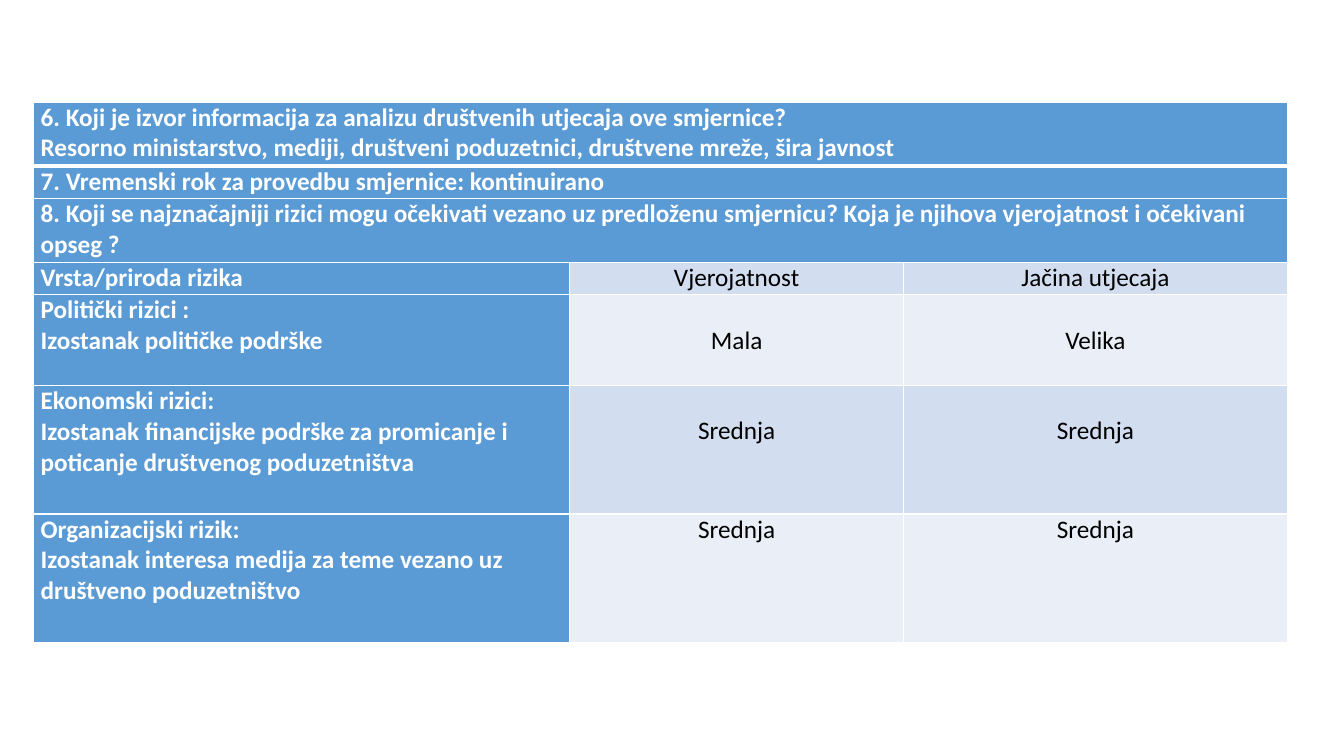
from lxml import etree
from pptx import Presentation
from pptx import util as u
from pptx.dml.color import RGBColor
from pptx.enum import text
from pptx.oxml import ns

WIDE, HIGH = u.Inches(13.33), u.Inches(7.5)
WHITE = RGBColor(0xFF, 0xFF, 0xFF)
BLACK = RGBColor(0, 0, 0)
BLUE = RGBColor(0x5B, 0x9B, 0xD5)
BANDS = RGBColor(0xD2, 0xDE, 0xEF), RGBColor(0xEA, 0xEF, 0xF7)

# Shares of the slide in percent
COLS = 39.9, 24.83, 28.57
ROWS = 8.5, 4.25, 8.5, 4.25, 12, 17, 17
LINE = u.Inches(0.3)
SIDE = u.Inches(0.07)

HEADS = [
    "6. Koji je izvor informacija za analizu društvenih utjecaja ove smjernice?\n"
    "Resorno ministarstvo, mediji, društveni poduzetnici, društvene mreže, šira javnost",
    "7. Vremenski rok za provedbu smjernice: kontinuirano",
    "8. Koji se najznačajniji rizici mogu očekivati vezano uz predloženu smjernicu? "
    "Koja je njihova vjerojatnost i očekivani opseg ?",
]
# Label, likelihood, impact, lines left free above the ratings
RISKS = [
    ("Vrsta/priroda rizika", "Vjerojatnost", "Jačina utjecaja", 0),
    ("Politički rizici :\nIzostanak političke podrške", "Mala", "Velika", 1),
    ("Ekonomski rizici:\nIzostanak financijske podrške za promicanje i "
     "poticanje društvenog poduzetništva", "Srednja", "Srednja", 1),
    ("Organizacijski rizik:\nIzostanak interesa medija za teme vezano uz "
     "društveno poduzetništvo", "Srednja", "Srednja", 0),
]


def share(size, part):
    return u.Emu(int(size * part / 100))


def edge(cell, side, width):
    props = cell._tc.get_or_add_tcPr()
    line = etree.SubElement(props, ns.qn("a:ln" + side), w=str(u.Pt(width)))
    fill = etree.SubElement(line, ns.qn("a:solidFill"))
    etree.SubElement(fill, ns.qn("a:srgbClr"), val=str(WHITE))


def frame(table):
    """Rule all cells in white, with a thick line under the first row."""
    for row, line in enumerate(table.rows):
        for cell in line.cells:
            for side in "LRTB":
                thick = (row, side) in ((0, "B"), (1, "T"))
                edge(cell, side, 3 if thick else 1)


def paint(cell, words, fill, ink, bold=False, align=text.PP_ALIGN.LEFT, top=0):
    cell.fill.solid()
    cell.fill.fore_color.rgb = fill
    cell.margin_left = cell.margin_right = SIDE
    cell.margin_top, cell.margin_bottom = top, 0
    cell.text_frame.text = words
    for para in cell.text_frame.paragraphs:
        para.alignment = align
        for run in para.runs:
            font = run.font
            font.name, font.size, font.bold = "Calibri", u.Pt(18), bold
            font.color.rgb = ink


def grid(slide):
    table = slide.shapes.add_table(
        len(ROWS), len(COLS), share(WIDE, 2.5), share(HIGH, 13.5),
        share(WIDE, sum(COLS)), share(HIGH, sum(ROWS))).table
    for col, part in zip(table.columns, COLS):
        col.width = share(WIDE, part)
    for row, part in zip(table.rows, ROWS):
        row.height = share(HIGH, part)
    return table


def main():
    deck = Presentation()
    deck.slide_width, deck.slide_height = WIDE, HIGH
    table = grid(deck.slides.add_slide(deck.slide_layouts[6]))
    frame(table)
    for row, words in enumerate(HEADS):
        cell = table.cell(row, 0)
        cell.merge(table.cell(row, len(COLS) - 1))
        paint(cell, words, BLUE, WHITE, bold=True)
    for num, (label, *rates, skip) in enumerate(RISKS):
        row = len(HEADS) + num
        paint(table.cell(row, 0), label, BLUE, WHITE, bold=True)
        for col, rate in enumerate(rates, 1):
            paint(table.cell(row, col), rate, BANDS[num % 2], BLACK,
                  align=text.PP_ALIGN.CENTER, top=skip * LINE)
    deck.save("out.pptx")


if __name__ == "__main__":
    main()
